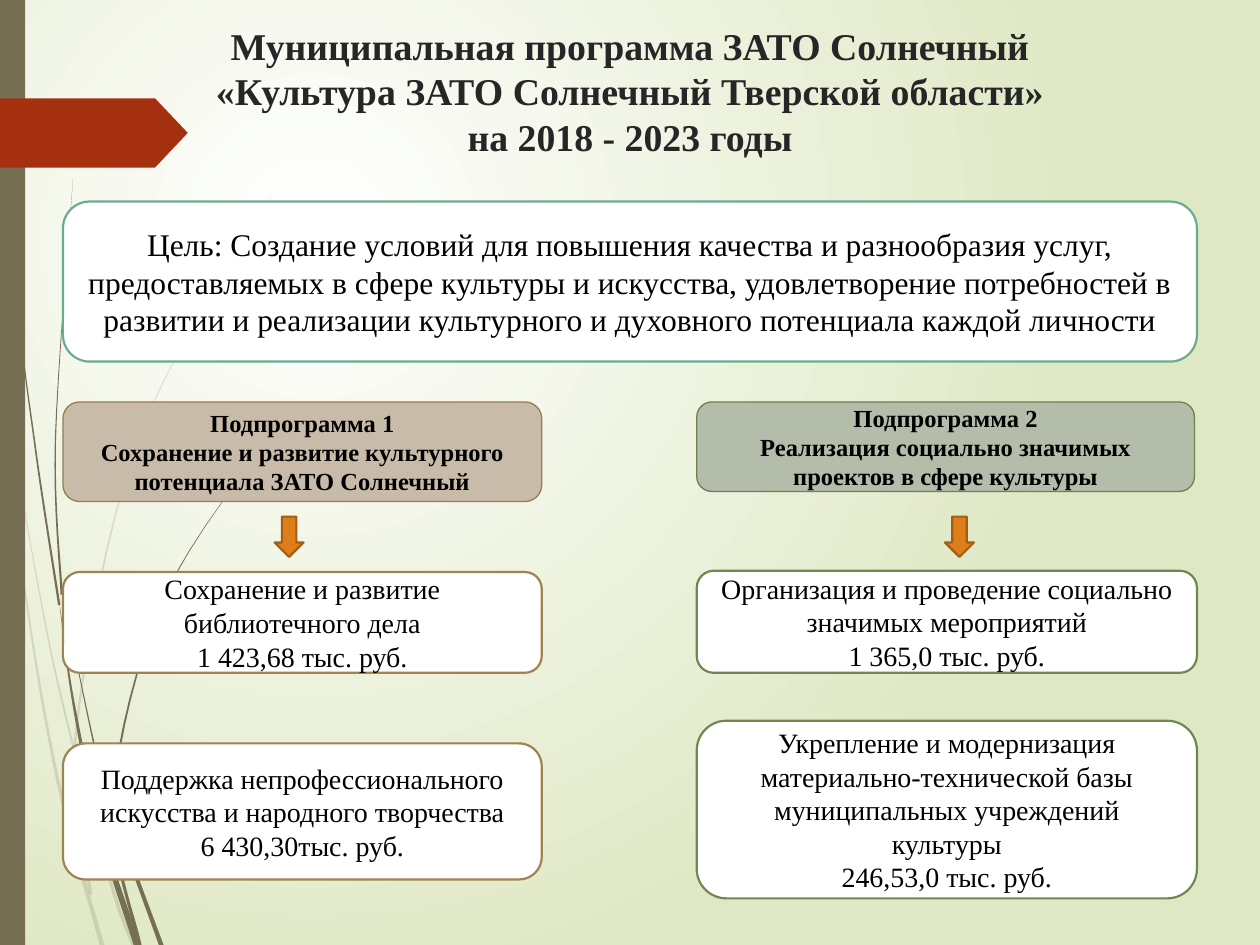
from dataclasses import dataclass

from lxml.etree import SubElement
from pptx import Presentation
from pptx.dml.color import RGBColor
from pptx.enum.shapes import MSO_SHAPE
from pptx.enum.text import MSO_ANCHOR, PP_ALIGN
from pptx.oxml.ns import qn
from pptx.util import Inches, Pt


@dataclass(frozen=True)
class Theme:
    font: str = "Times New Roman"
    white: str = "FFFFFF"
    black: str = "000000"
    title: str = "262626"
    backdrop: str = "DFE8C4"
    stem: str = "766F54"
    tag: str = "A53010"
    goal_line: str = "6AAC91"
    first_head: str = "C8BBAA"
    first_head_line: str = "987D4D"
    first_line: str = "9F8351"
    second_head: str = "B4BCAA"
    second_head_line: str = "6D804F"
    second_line: str = "728653"
    arrow: str = "DE7E18"
    arrow_line: str = "A45D12"
    title_size: float = 21.6
    goal_size: float = 18
    head_size: float = 14
    item_size: float = 16
    thin: float = 0.75
    thick: float = 1.25


THEME = Theme()

# Each stem: width at its thick end, then the points it grows through.
PALE_STEMS = (
    (0.04, ((0, 2.9), (0.41, 5.2), (0.86, 6.94), (1.06, 7.5))),
    (0.04, ((0.08, 3.5), (0.2, 4.7), (0.46, 6.2), (0.81, 7.5))),
    (0.03, ((2.17, 1.53), (1.1, 3.48), (0.6, 5.84), (0.72, 7.1))),
)
DARK_STEMS = (
    (0.02, ((0.02, 0), (0.14, 2.33), (0.28, 3.55), (0.47, 4.8))),
    (0.04, ((0.5, 4.72), (0.75, 5.92), (0.9, 6.45), (1.28, 7.5))),
    (0.06, ((0.47, 4.77), (0.58, 5.56), (0.79, 6.57), (1.09, 7.5))),
    (0.02, ((0.58, 1.41), (0.44, 3.49), (0.49, 4.72))),
    (0.03, ((2.16, 3.44), (1.3, 4.75), (0.9, 6.33), (1.11, 7.5))),
)


def paint(shape, fill, line=None, width=0):
    shape.shadow.inherit = False
    shape.fill.solid()
    shape.fill.fore_color.rgb = RGBColor.from_string(fill)
    if line is None:
        shape.line.fill.background()
    else:
        shape.line.color.rgb = RGBColor.from_string(line)
        shape.line.width = Pt(width)


def paint_background(slide):
    """Radial gradient centred a quarter of the way in from the top left."""
    fill = slide.background.fill
    fill.gradient()
    for stop, color in zip(fill.gradient_stops, (THEME.white, THEME.backdrop)):
        stop.color.rgb = RGBColor.from_string(color)
    gradient = slide.element.find(".//" + qn("a:gradFill"))
    gradient.remove(gradient.find(qn("a:lin")))
    circle = SubElement(gradient, qn("a:path"), path="circle")
    SubElement(circle, qn("a:fillToRect"), l="50000", t="50000", r="100000", b="100000")


def smooth_curve(knots, steps=8):
    """Points of a Catmull-Rom curve through the knots."""
    padded = (knots[0], *knots, knots[-1])
    points = [knots[0]]
    for before, start, end, after in zip(padded, padded[1:], padded[2:], padded[3:]):
        for step in range(1, steps + 1):
            t = step / steps
            points.append(tuple(
                b + t / 2 * (c - a + t * (2 * a - 5 * b + 4 * c - d + t * (3 * (b - c) + d - a)))
                for a, b, c, d in zip(before, start, end, after)))
    return points


def add_outline(shapes, points, color):
    start, *rest = [(Inches(x), Inches(y)) for x, y in points]
    builder = shapes.build_freeform(*start)
    builder.add_line_segments(rest, close=True)
    outline = builder.convert_to_shape()
    paint(outline, color)
    return outline


def add_stems(slide, stems, opacity=100):
    """Group of curved stems, each widening from its tip."""
    group = slide.shapes.add_group_shape()
    for width, knots in stems:
        center = smooth_curve(knots)
        left, right = [
            [(x + side * width * index / len(center) / 2, y) for index, (x, y) in enumerate(center)]
            for side in (-1, 1)]
        outline = add_outline(group.shapes, left + right[::-1], THEME.stem)
        color = outline.element.spPr.find(qn("a:solidFill"))[0]
        SubElement(color, qn("a:alpha"), val=str(opacity * 1000))


def add_tag(slide):
    top, bottom, shoulder, tip = 0.78, 1.33, 1.23, 1.49
    middle = (top + bottom) / 2
    points = ((0, top), (shoulder, top), (tip, middle), (shoulder, bottom), (0, bottom))
    add_outline(slide.shapes, points, THEME.tag)


def write(shape, text, size, color=THEME.black, bold=False):
    frame = shape.text_frame
    frame.text = text
    frame.word_wrap = True
    frame.vertical_anchor = MSO_ANCHOR.MIDDLE
    font_format = {"name": THEME.font, "size": Pt(size), "bold": bold}
    for para in frame.paragraphs:
        para.alignment = PP_ALIGN.CENTER
        for span in para.runs:
            span.font.color.rgb = RGBColor.from_string(color)
            for name, value in font_format.items():
                setattr(span.font, name, value)


def add_box(slide, kind, place, fill, line=None, width=THEME.thick):
    box = slide.shapes.add_shape(kind, *map(Inches, place))
    paint(box, fill, line, width)
    return box


def add_title(slide, text):
    title = slide.shapes.title
    title.left, title.top, title.width, title.height = map(Inches, (0.5, 0.13, 9, 1.18))
    write(title, text, THEME.title_size, THEME.title, bold=True)


def add_program(slide, head, head_place, head_colors, items, item_width, item_line, arrow_left):
    """A column: subprogramme heading, down arrow and its funded items."""
    box = add_box(slide, MSO_SHAPE.FLOWCHART_ALTERNATE_PROCESS, head_place, *head_colors, THEME.thin)
    write(box, head, THEME.head_size, bold=True)
    for text, top, height in items:
        place = (head_place[0], top, item_width, height)
        box = add_box(slide, MSO_SHAPE.ROUNDED_RECTANGLE, place, THEME.white, item_line)
        write(box, text, THEME.item_size)
    add_box(slide, MSO_SHAPE.DOWN_ARROW, (arrow_left, 4.1, 0.23, 0.32), THEME.arrow, THEME.arrow_line)


def main():
    deck = Presentation()
    deck.slide_width, deck.slide_height = Inches(10), Inches(7.5)
    slide = deck.slides.add_slide(deck.slide_layouts[5])
    paint_background(slide)
    add_stems(slide, PALE_STEMS, opacity=20)
    add_stems(slide, DARK_STEMS)
    add_box(slide, MSO_SHAPE.RECTANGLE, (0, 0, 0.2, 7.5), THEME.stem)
    add_tag(slide)
    add_title(slide, "Муниципальная программа ЗАТО Солнечный\v"
                     "«Культура ЗАТО Солнечный Тверской области»\vна 2018 - 2023 годы")
    goal = add_box(slide, MSO_SHAPE.FLOWCHART_ALTERNATE_PROCESS, (0.5, 1.6, 9, 1.27),
                   THEME.white, THEME.goal_line)
    write(goal, "Цель: Создание условий для повышения качества и разнообразия услуг, предоставляемых "
                "в сфере культуры и искусства, удовлетворение потребностей в развитии и реализации "
                "культурного и духовного потенциала каждой личности", THEME.goal_size)
    add_program(
        slide, "Подпрограмма 1\nСохранение и развитие культурного потенциала ЗАТО Солнечный",
        (0.5, 3.19, 3.8, 0.79), (THEME.first_head, THEME.first_head_line),
        (("Сохранение и развитие библиотечного дела\n1 423,68 тыс. руб.", 4.54, 0.8),
         ("Поддержка непрофессионального искусства и народного творчества\n6 430,30тыс. руб.",
          5.9, 1.08)), 3.8, THEME.first_line, 2.18)
    add_program(
        slide, "Подпрограмма 2\nРеализация социально значимых проектов в сфере культуры",
        (5.53, 3.19, 3.95, 0.71), (THEME.second_head, THEME.second_head_line),
        (("Организация и проведение социально значимых мероприятий\n1 365,0 тыс. руб.", 4.53, 0.81),
         ("Укрепление и модернизация материально-технической базы муниципальных учреждений "
          "культуры\n246,53,0 тыс. руб.", 5.72, 1.41)), 3.97, THEME.second_line, 7.5)
    deck.save("out.pptx")


if __name__ == "__main__":
    main()
